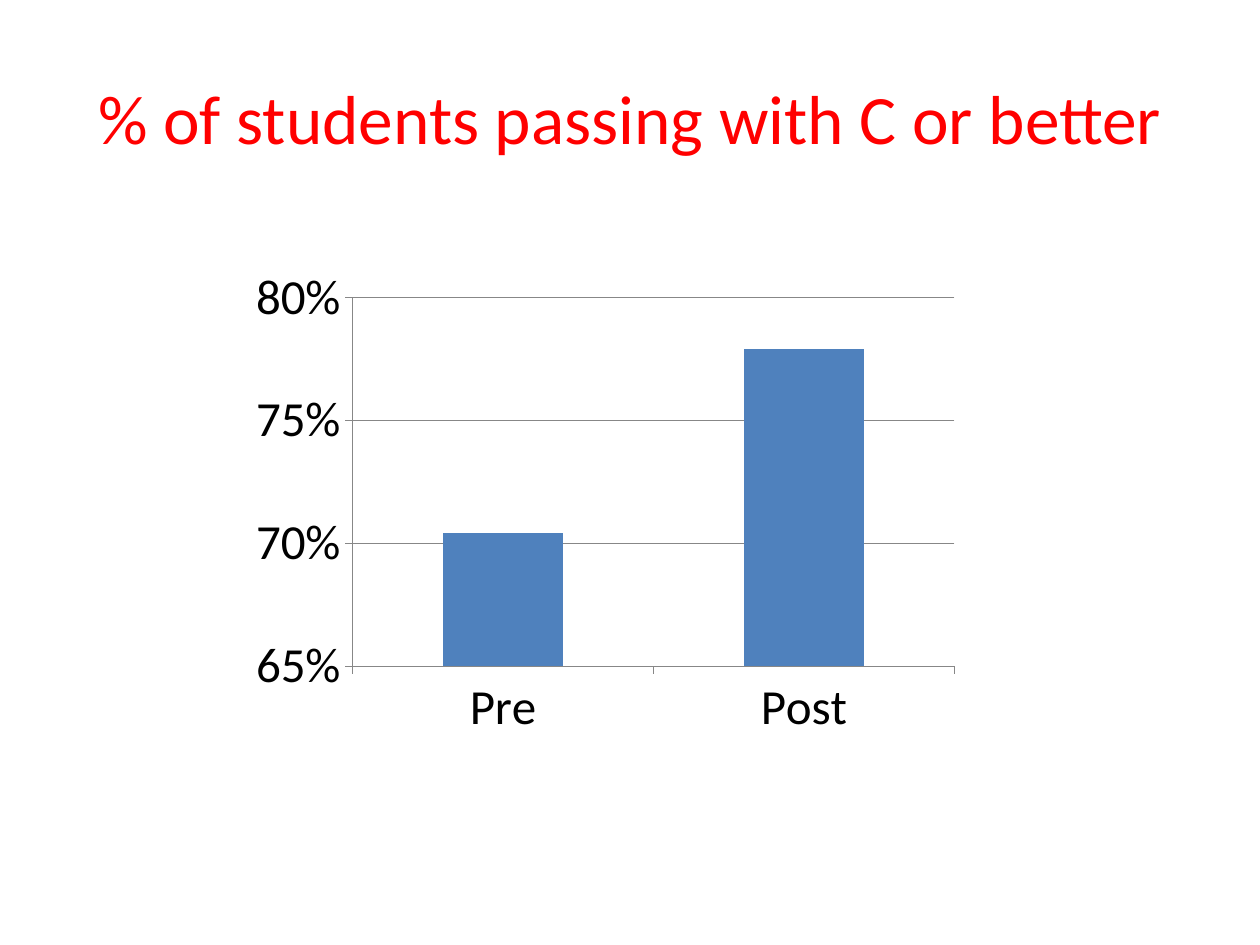
from typing import NamedTuple

from lxml import etree
from pptx import Presentation
from pptx.chart.data import CategoryChartData
from pptx.dml.color import RGBColor
from pptx.enum.chart import XL_CHART_TYPE, XL_TICK_MARK
from pptx.enum.text import MSO_ANCHOR, PP_ALIGN
from pptx.oxml.ns import qn
from pptx.util import Pt

COLUMNS = XL_CHART_TYPE.COLUMN_CLUSTERED
TICK_OUT = XL_TICK_MARK.OUTSIDE
MIDDLE = MSO_ANCHOR.MIDDLE
CENTER = PP_ALIGN.CENTER
EMU_PER_PX = 914400 / 126
FONT = "Calibri"
AXIS_GREY = "878787"


class Box(NamedTuple):
    left: int
    top: int
    width: int
    height: int

    def emu(self) -> list[int]:
        return [px(length) for length in self]


class PassRate(NamedTuple):
    stage: str
    share: float


PASS_RATES = [PassRate("Pre", 0.704), PassRate("Post", 0.779)]


def px(length: int) -> int:
    return round(length * EMU_PER_PX)


def color(hex_code: str) -> RGBColor:
    return RGBColor.from_string(hex_code)


def style_font(font, size: float, hex_code: str) -> None:
    font.name = FONT
    font.size = Pt(size)
    font.color.rgb = color(hex_code)


def style_line(line) -> None:
    line.color.rgb = color(AXIS_GREY)
    line.width = Pt(0.75)


def add_heading(slide, box: Box, text: str) -> None:
    frame = slide.shapes.add_textbox(*box.emu()).text_frame
    frame.word_wrap = True
    frame.vertical_anchor = MIDDLE
    paragraph = frame.paragraphs[0]
    paragraph.alignment = CENTER
    run = paragraph.add_run()
    run.text = text
    style_font(run.font, 39.6, "FF0000")


def place_plot(chart, x: float, y: float, w: float, h: float) -> None:
    plot_area = chart.plots[0]._element.getparent()
    for old_layout in plot_area.findall(qn("c:layout")):
        plot_area.remove(old_layout)
    layout = etree.Element(qn("c:layout"))
    manual = etree.SubElement(layout, qn("c:manualLayout"))
    settings = {"layoutTarget": "inner", "xMode": "edge", "yMode": "edge",
                "x": x, "y": y, "w": w, "h": h}
    for tag, value in settings.items():
        etree.SubElement(manual, qn(f"c:{tag}")).set("val", str(value))
    plot_area.insert(0, layout)


def add_pass_rate_chart(slide, box: Box, rates: list[PassRate]) -> None:
    data = CategoryChartData(number_format="0%")
    data.categories = [rate.stage for rate in rates]
    data.add_series("Series 1", [rate.share for rate in rates])
    chart = slide.shapes.add_chart(COLUMNS, *box.emu(), data).chart
    chart.has_legend = False
    chart.has_title = False
    style_font(chart.font, 28, "000000")

    columns = chart.plots[0]
    columns.vary_by_categories = False
    columns.gap_width = 150
    fill = columns.series[0].format.fill
    fill.solid()
    fill.fore_color.rgb = color("4F81BD")

    shares = chart.value_axis
    shares.minimum_scale = 0.65
    shares.maximum_scale = 0.8
    shares.major_unit = 0.05
    shares.tick_labels.number_format = "0%"
    shares.tick_labels.number_format_is_linked = False
    shares.has_major_gridlines = True
    style_line(shares.major_gridlines.format.line)
    for axis in (chart.category_axis, shares):
        axis.major_tick_mark = TICK_OUT
        style_line(axis.format.line)
    place_plot(chart, 0.17, 0.06, 0.79, 0.72)


def main() -> None:
    deck = Presentation()
    deck.slide_width, deck.slide_height = px(1260), px(945)
    slide = deck.slides.add_slide(deck.slide_layouts[6])
    add_heading(slide, Box(63, 38, 1134, 158), "% of students passing with C or better")
    add_pass_rate_chart(slide, Box(223, 267, 762, 512), PASS_RATES)
    deck.save("out.pptx")


if __name__ == "__main__":
    main()
